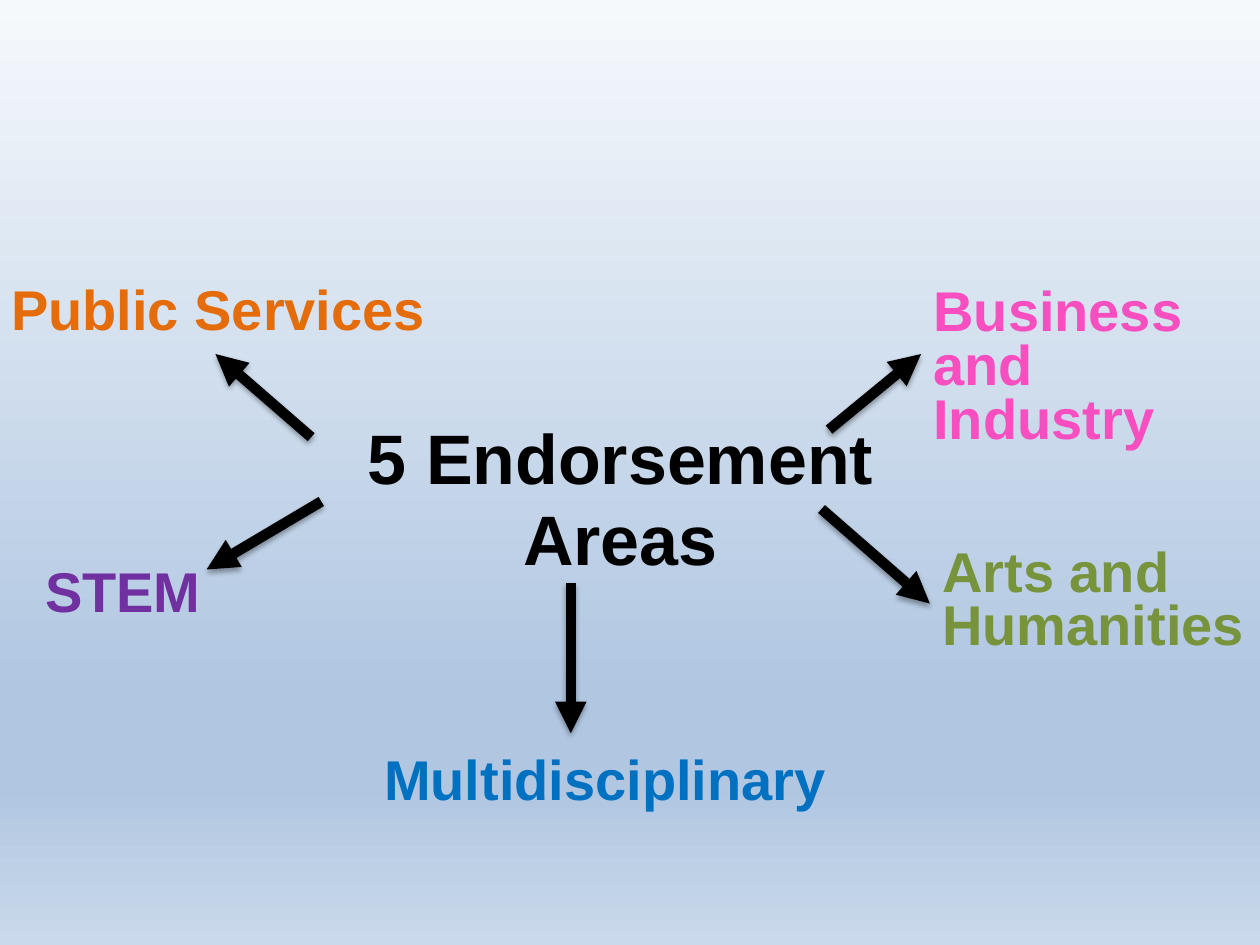
"""Build a slide of five endorsement areas around a central title."""
from pptx import Presentation
from pptx.dml.color import RGBColor
from pptx.enum.shapes import MSO_CONNECTOR
from pptx.enum.text import MSO_ANCHOR, MSO_AUTO_SIZE, PP_ALIGN
from pptx.oxml import parse_xml
from pptx.oxml.ns import nsdecls
from pptx.util import Inches, Pt

LEFT, CENTER = PP_ALIGN.LEFT, PP_ALIGN.CENTER
TOP, FIT = MSO_ANCHOR.TOP, MSO_AUTO_SIZE.SHAPE_TO_FIT_TEXT
STRAIGHT = MSO_CONNECTOR.STRAIGHT
BLACK = RGBColor(0x00, 0x00, 0x00)
PINK = RGBColor(0xF7, 0x4F, 0xBF)
GREEN = RGBColor(0x77, 0x93, 0x3C)
BLUE = RGBColor(0x00, 0x70, 0xC0)
PURPLE = RGBColor(0x70, 0x30, 0xA0)
ORANGE = RGBColor(0xE4, 0x6C, 0x0A)

TITLE = ["5 Endorsement", "Areas"]
TITLE_BOX = (2.47, 3.37, 4.91, 1.31)
AREAS = [
    ("Business and Industry", PINK, (7.31, 2.24, 2.69, 1.39), (6.58, 3.41, 7.31, 2.81)),
    ("Arts and Humanities", GREEN, (7.38, 4.31, 3.1, 0.96), (6.52, 4.04, 7.38, 4.79)),
    ("Multidisciplinary", BLUE, (2.95, 5.96, 3.94, 0.53), (4.53, 4.63, 4.53, 5.82)),
    ("STEM", PURPLE, (0.26, 4.47, 1.6, 0.53), (2.55, 3.98, 1.64, 4.52)),
    ("Public Services", ORANGE, (-0.01, 2.23, 3.71, 0.53), (2.47, 3.47, 1.71, 2.81)),
]
BACKGROUND = [(0, "F6F9FC"), (74, "B0C6E1"), (83, "B0C6E1"), (100, "CAD9EB")]


def write(sp, lines, *, size, color, align=LEFT):
    tf = sp.text_frame
    tf.word_wrap = True
    tf.auto_size = FIT
    tf.vertical_anchor = TOP
    for i, line in enumerate(lines):
        p = tf.add_paragraph() if i else tf.paragraphs[0]
        p.alignment = align
        p.line_spacing = 0.8
        p.space_before = Pt(size * 0.2)
        r = p.add_run()
        r.text = line
        r.font.name = "Arial"
        r.font.size = Pt(size)
        r.font.bold = True
        r.font.color.rgb = color


def add_arrow(s, ends):
    line = s.shapes.add_connector(STRAIGHT, *map(Inches, ends))
    line.line.color.rgb = BLACK
    line.line.width = Pt(6)
    line.line._get_or_add_ln().append(parse_xml(f'<a:tailEnd {nsdecls("a")} type="triangle"/>'))
    line._element.spPr.append(parse_xml(
        f'<a:effectLst {nsdecls("a")}>'
        f'<a:outerShdw blurRad="{Pt(3.1)}" dist="{Pt(1.8)}" dir="5400000" rotWithShape="0">'
        '<a:srgbClr val="000000"><a:alpha val="35000"/></a:srgbClr>'
        '</a:outerShdw></a:effectLst>'))


def paint_background(s):
    fill = s.background.fill
    fill.gradient()
    fill.gradient_angle = 270
    stops = s.element.xpath(".//p:bg//a:gsLst")[0]
    for stop in list(stops):
        stops.remove(stop)
    for percent, color in BACKGROUND:
        stops.append(parse_xml(
            f'<a:gs {nsdecls("a")} pos="{percent * 1000}"><a:srgbClr val="{color}"/></a:gs>'))


def main():
    prs = Presentation()
    prs.slide_width, prs.slide_height = Inches(10), Inches(7.5)
    s = prs.slides.add_slide(prs.slide_layouts[5])
    paint_background(s)
    title = s.shapes.title
    title.left, title.top, title.width, title.height = map(Inches, TITLE_BOX)
    write(title, TITLE, size=40, color=BLACK, align=CENTER)
    for name, color, box, ends in AREAS:
        write(s.shapes.add_textbox(*map(Inches, box)), [name], size=32, color=color)
        add_arrow(s, ends)
    prs.save("out.pptx")


if __name__ == "__main__":
    main()
